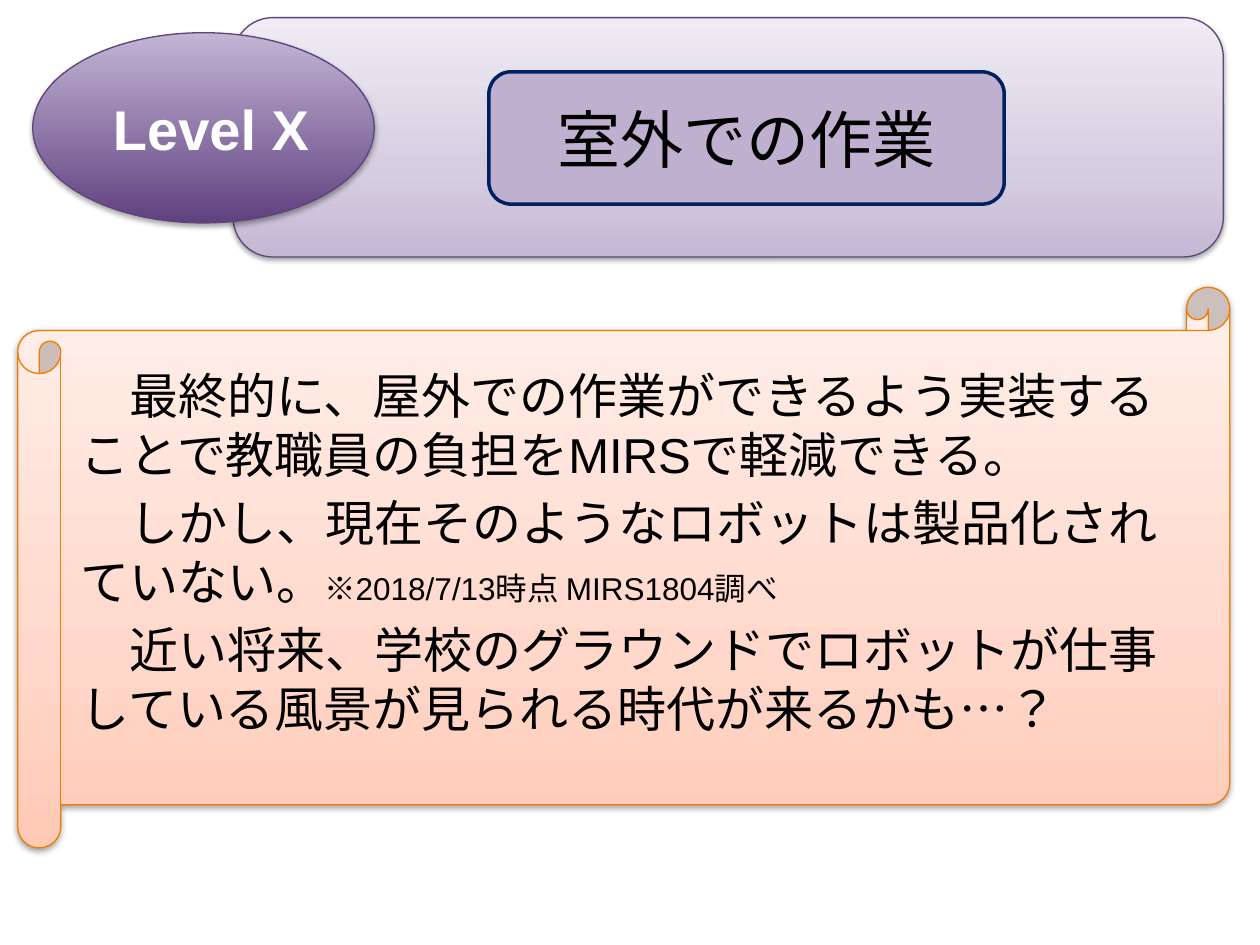
import pptx
import pptx.util
import pptx.dml.color
import pptx.enum.dml
import pptx.enum.lang
import pptx.enum.shapes
import pptx.enum.text
import pptx.oxml
import pptx.oxml.ns

RGB = pptx.dml.color.RGBColor
BLACK, WHITE = RGB(0, 0, 0), RGB(255, 255, 255)
NAVY, LILAC = RGB(0x00, 0x20, 0x60), RGB(0xBF, 0xB0, 0xCF)
PLUM, ORANGE = RGB(0x5E, 0x45, 0x77), RGB(0xF0, 0x7C, 0x03)
# Gradients run from the bottom up: (percent, colour)
PEACH = [(0, RGB(0xFF, 0xC9, 0xB5)), (35, RGB(0xFF, 0xD8, 0xCB)),
         (100, RGB(0xFF, 0xF0, 0xEB))]
MIST = [(0, RGB(0xC4, 0xB8, 0xD4)), (35, RGB(0xD5, 0xCD, 0xE0)),
        (100, RGB(0xEF, 0xEC, 0xF4))]
GRAPE = [(0, RGB(0x60, 0x41, 0x7F)), (100, RGB(0xC3, 0xB5, 0xD6))]
KIND = pptx.enum.shapes.MSO_SHAPE
NS = pptx.oxml.ns.nsdecls("a")


class Deck:
    """Style and current slide; lengths are cells of a 100 by 75 grid."""
    font = "Arial"

    def __init__(self):
        self.file = pptx.Presentation()
        self.file.slide_width = pptx.util.Inches(10)
        self.file.slide_height = pptx.util.Inches(7.5)
        self.cell = self.file.slide_width / 100
        self.slide = self.file.slides.add_slide(self.file.slide_layouts[6])

    def grid(self, *cells):
        return [round(n * self.cell) for n in cells]

    def shape(self, kind, area, fill, line, width=0.75, dark=38):
        item = self.slide.shapes.add_shape(kind, *self.grid(*area))
        item.shadow.inherit = False
        item.line.color.rgb = line
        item.line.width = pptx.util.Pt(width)
        if isinstance(fill, list):
            self.blend(item, fill)
            self.shade(item, dark)
        else:
            item.fill.solid()
            item.fill.fore_color.rgb = fill
        return item

    def blend(self, item, stops):
        marks = "".join(
            f'<a:gs pos="{at * 1000}"><a:srgbClr val="{tint}"/></a:gs>'
            for at, tint in stops)
        item._element.spPr.find(pptx.oxml.ns.qn("a:prstGeom")).addnext(
            pptx.oxml.parse_xml(
                f'<a:gradFill {NS} rotWithShape="1"><a:gsLst>{marks}</a:gsLst>'
                '<a:lin ang="16200000" scaled="0"/></a:gradFill>'))

    def shade(self, item, dark):
        list_ = item._element.spPr.find(pptx.oxml.ns.qn("a:effectLst"))
        list_.append(pptx.oxml.parse_xml(
            f'<a:outerShdw {NS} blurRad="40000" dist="20000" dir="5400000" '
            'rotWithShape="0"><a:srgbClr val="000000">'
            f'<a:alpha val="{dark * 1000}"/></a:srgbClr></a:outerShdw>'))

    def style(self, run, size, tint, bold=False):
        run.font.name = self.font
        run.font.size = pptx.util.Pt(size)
        run.font.color.rgb = tint
        run.font.bold = bold
        run.font.language_id = pptx.enum.lang.MSO_LANGUAGE_ID.JAPANESE

    def label(self, item, text, size, tint, bold=False):
        frame = item.text_frame
        frame.text = text
        frame.vertical_anchor = pptx.enum.text.MSO_ANCHOR.MIDDLE
        line = frame.paragraphs[0]
        line.alignment = pptx.enum.text.PP_ALIGN.CENTER
        self.style(line.runs[0], size, tint, bold)

    def prose(self, area, paras, size):
        """Each paragraph is a list of (text, size) runs."""
        frame = self.slide.shapes.add_textbox(*self.grid(*area)).text_frame
        frame.word_wrap = True
        frame.margin_left, frame.margin_top = self.grid(1.1, 0.6)
        frame.margin_right, frame.margin_bottom = self.grid(1.1, 0.6)
        for i, parts in enumerate(paras):
            para = frame.add_paragraph() if i else frame.paragraphs[0]
            # The first line starts one full character in
            props = para._p.get_or_add_pPr()
            props.set("marL", str(self.grid(0.6)[0]))
            props.set("indent", str(pptx.util.Pt(size)))
            if i:
                para.space_before = pptx.util.Pt(5.5)
            for text, points in parts:
                run = para.add_run()
                run.text = text
                self.style(run, points, BLACK)


def main():
    deck = Deck()

    # Scroll and header panel
    scroll = deck.shape(KIND.HORIZONTAL_SCROLL, (1.4, 22.8, 96.2, 44.5),
                        PEACH, ORANGE)
    scroll.adjustments[0] = 0.077
    deck.shape(KIND.ROUNDED_RECTANGLE, (18.5, 1.4, 78.6, 19), MIST, PLUM)

    # Body text
    deck.prose((4.7, 28.4, 90.2, 35), [
        [("最終的に、屋外での作業ができるよう実装することで教職員の負担をMIRSで軽減できる。", 28)],
        [("しかし、現在そのようなロボットは製品化されていない", 28), ("。", 27.4),
         ("※2018/7/13時点 MIRS1804調べ", 18)],
        [("近い将来、学校のグラウンドでロボットが仕事している風景が見られる時代が来るかも…？", 28)],
    ], 28)

    # Level badge, its text set a little right of centre
    badge = deck.shape(KIND.OVAL, (2.6, 2.6, 27.1, 15.1), GRAPE, PLUM, dark=35)
    deck.label(badge, "Level X", 32, WHITE, True)
    badge.text_frame.margin_left = deck.grid(2.2)[0]

    # Title
    title = deck.shape(KIND.ROUNDED_RECTANGLE, (38.8, 5.7, 40.9, 10.5),
                       LILAC, NAVY, 2)
    deck.label(title, "室外での作業", 36, BLACK)

    deck.file.save("out.pptx")


if __name__ == "__main__":
    main()
